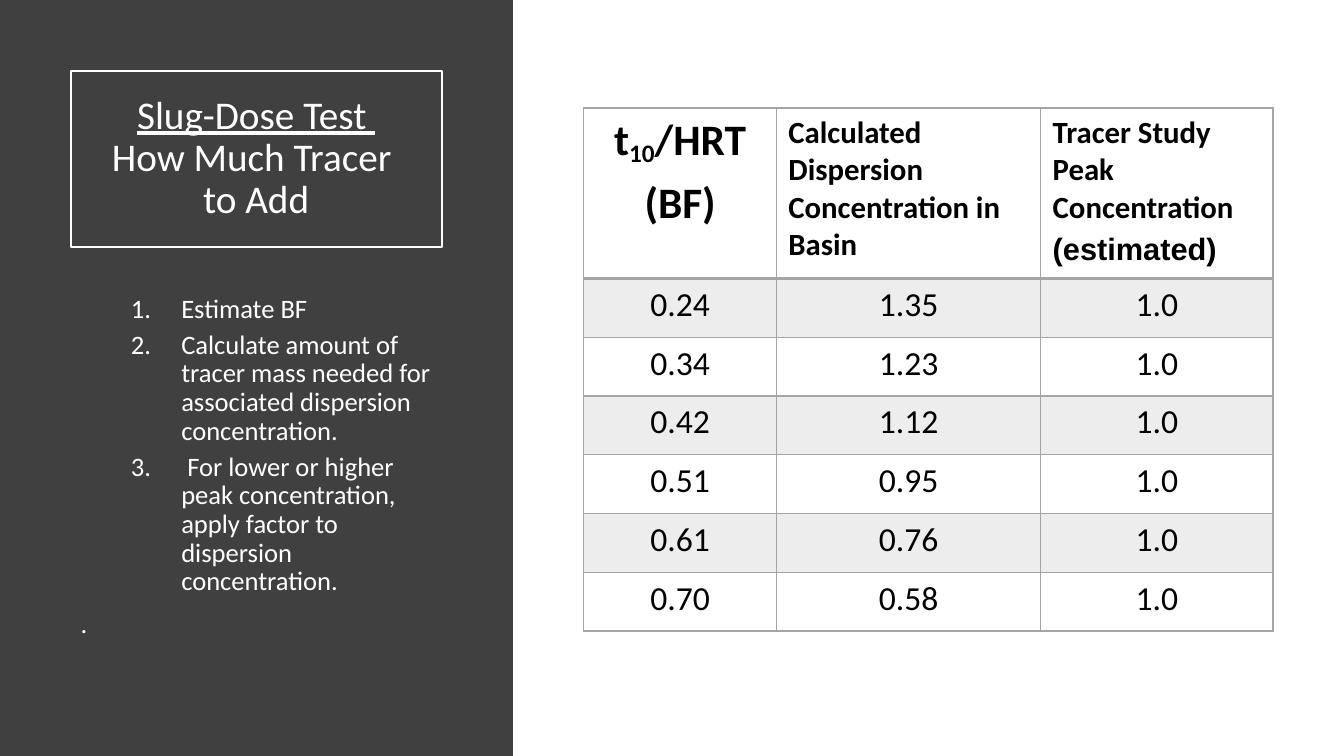
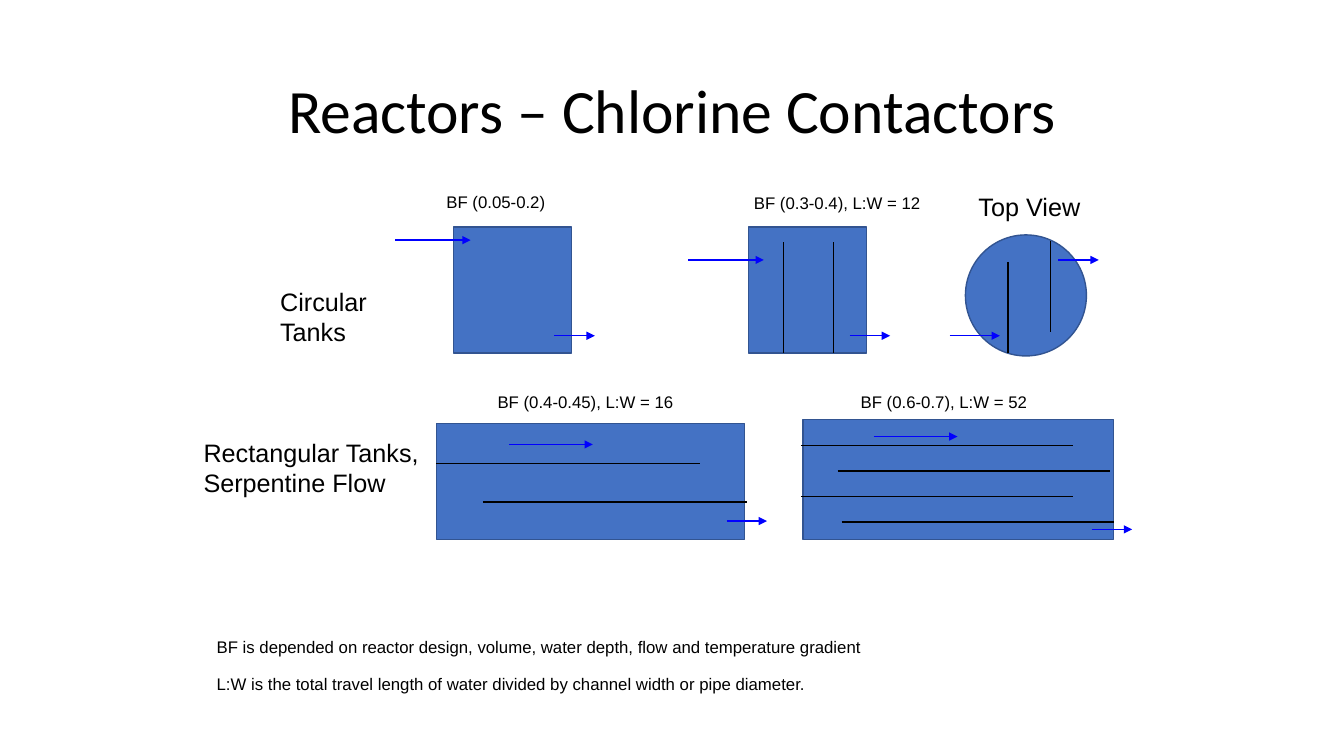
"""Builds two slides on tracer dosing and chlorine contactors."""
from lxml.etree import SubElement
from pptx import Presentation
from pptx.dml.color import RGBColor
from pptx.enum.shapes import MSO_CONNECTOR, MSO_SHAPE
from pptx.enum.text import MSO_ANCHOR, PP_ALIGN
from pptx.oxml.ns import qn
from pptx.util import Cm, Pt

COLORS = {
    "panel": "404040",
    "white": "FFFFFF",
    "black": "000000",
    "grid": "A5A5A5",
    "band": "EDEDED",
    "tank": "4472C4",
    "tank_edge": "325491",
    "flow": "0000FF",
}
HEADING_FONT = "Calibri"
LABEL_FONT = "Arial"
INFLOW, CHANNEL_FLOW, OUTFLOW = 1.9, 2.11, 1.02


def rgb(name):
    return RGBColor.from_string(COLORS[name])


def cm_box(box):
    return [Cm(length) for length in box]


def style(paragraph, size, color="black", font=HEADING_FONT, bold=False):
    paragraph.font.name = font
    paragraph.font.size = Pt(size)
    paragraph.font.bold = bold
    paragraph.font.color.rgb = rgb(color)


def add_block(shapes, kind, box, fill=None, line=None, weight=1):
    block = shapes.add_shape(kind, *cm_box(box))
    block.shadow.inherit = False
    if fill:
        block.fill.solid()
        block.fill.fore_color.rgb = rgb(fill)
    else:
        block.fill.background()
    if line:
        block.line.color.rgb = rgb(line)
        block.line.width = Pt(weight)
    else:
        block.line.fill.background()
    return block


def add_line(shapes, start, end, color="black", arrow=False):
    connector = shapes.add_connector(
        MSO_CONNECTOR.STRAIGHT, *cm_box(start), *cm_box(end))
    connector.line.color.rgb = rgb(color)
    connector.line.width = Pt(1)
    properties = connector._element.spPr
    if arrow:
        SubElement(connector.line._get_or_add_ln(), qn("a:tailEnd"), type="triangle")
    SubElement(properties, qn("a:effectLst"))


def write_title(frame, lines, size, color="black", underline_first=False):
    frame.word_wrap = True
    frame.vertical_anchor = MSO_ANCHOR.MIDDLE
    paragraph = frame.paragraphs[0]
    paragraph.alignment = PP_ALIGN.CENTER
    paragraph.line_spacing = 0.9
    style(paragraph, size, color)
    for index, line in enumerate(lines):
        if index:
            paragraph.add_line_break()
        run = paragraph.add_run()
        run.text = line
        if underline_first and index == 0:
            run.font.underline = True


def add_label(slide, box, lines, size=12):
    frame = slide.shapes.add_textbox(*cm_box(box)).text_frame
    frame.word_wrap = False
    frame.text = "\n".join(lines)
    for paragraph in frame.paragraphs:
        style(paragraph, size, font=LABEL_FONT)


def add_steps(slide, box, steps, closing):
    frame = slide.shapes.add_textbox(*cm_box(box)).text_frame
    frame.word_wrap = True
    frame.text = "\n".join([*steps, closing])
    for index, paragraph in enumerate(frame.paragraphs):
        style(paragraph, 19, "white")
        paragraph.line_spacing = 0.9
        numbered = index < len(steps)
        paragraph.space_before = Pt(5 if numbered else 10)
        if numbered:
            properties = paragraph._p.get_or_add_pPr()
            properties.set("marL", str(Cm(2.54)))
            properties.set("indent", str(-Cm(1.27)))
            numbering = properties.makeelement(
                qn("a:buAutoNum"), {"type": "arabicPeriod"})
            properties.find(qn("a:defRPr")).addprevious(numbering)


def add_border(cell, side, weight):
    border = SubElement(cell._tc.get_or_add_tcPr(), qn(f"a:ln{side}"), w=str(Pt(weight)))
    fill = SubElement(border, qn("a:solidFill"))
    SubElement(fill, qn("a:srgbClr"), val=COLORS["grid"])


def write_cell(cell, paragraphs, size, centred, bold=False, gap=0.2):
    cell.margin_left = cell.margin_right = Cm(0.3)
    cell.margin_top = cell.margin_bottom = Cm(0.15)
    frame = cell.text_frame
    for index, pieces in enumerate(paragraphs):
        paragraph = frame.add_paragraph() if index else frame.paragraphs[0]
        paragraph.alignment = PP_ALIGN.CENTER if centred else PP_ALIGN.LEFT
        paragraph.space_before = Pt(size * gap)
        style(paragraph, size, bold=bold)
        for position, piece in enumerate(pieces):
            run = paragraph.add_run()
            run.text = piece
            if position % 2:
                run._r.get_or_add_rPr().set("baseline", "-16000")


def add_dose_table(slide, corner, widths, header, rows):
    heights = [4.3] + [1.48] * len(rows)
    table = slide.shapes.add_table(
        len(heights), len(widths), *cm_box(corner),
        Cm(sum(widths)), Cm(sum(heights))).table
    table.first_row = table.horz_banding = False
    for column, width in zip(table.columns, widths):
        column.width = Cm(width)
    for row, height in zip(table.rows, heights):
        row.height = Cm(height)
    for column, heading in enumerate(header):
        write_cell(table.cell(0, column), bold=True, **heading)
    for row, values in enumerate(rows, 1):
        for column, value in enumerate(values):
            write_cell(table.cell(row, column), [(value,)], 24, True)
    for row in range(len(heights)):
        for column in range(len(widths)):
            cell = table.cell(row, column)
            for side in "LRTB":
                under_header = (row, side) in ((0, "B"), (1, "T"))
                add_border(cell, side, 2 if under_header else 1)
            if row % 2:
                cell.fill.solid()
                cell.fill.fore_color.rgb = rgb("band")
            else:
                cell.fill.background()
    table.cell(0, 2).text_frame.paragraphs[1].font.name = LABEL_FONT


def add_tank(slide, box, baffles=(), flows=(), kind=MSO_SHAPE.RECTANGLE):
    shapes = slide.shapes.add_group_shape().shapes
    add_block(shapes, kind, box, "tank", "tank_edge")
    for start, end in baffles:
        add_line(shapes, start, end)
    for x, y, length in flows:
        add_line(shapes, (x, y), (x + length, y), "flow", arrow=True)


def build_slug_dose(slide):
    add_block(slide.shapes, MSO_SHAPE.RECTANGLE, (0, 0, 12.93, 19.05), "panel")
    title = add_block(slide.shapes, MSO_SHAPE.RECTANGLE, (1.78, 1.78, 9.35, 4.45),
                      line="white", weight=1.5)
    write_title(title.text_frame, ["Slug-Dose Test ", "How Much Tracer ", "to Add"],
                28, "white", underline_first=True)
    add_steps(slide, (1.78, 7.32, 9.35, 9.5), [
        "Estimate BF",
        "Calculate amount of tracer mass needed for associated dispersion concentration.",
        " For lower or higher peak concentration, apply factor to dispersion concentration.",
    ], ".")
    header = [
        {"paragraphs": [("t", "10", "/HRT"), ("(BF)",)], "size": 31, "centred": True},
        {"paragraphs": [("Calculated Dispersion",), ("Concentration in Basin",)],
         "size": 22, "centred": False, "gap": 0},
        {"paragraphs": [("Tracer Study Peak Concentration",), ("(estimated)",)],
         "size": 22, "centred": False},
    ]
    doses = [("0.24", "1.35"), ("0.34", "1.23"), ("0.42", "1.12"),
             ("0.51", "0.95"), ("0.61", "0.76"), ("0.70", "0.58")]
    add_dose_table(slide, (14.71, 2.72), (4.86, 6.66, 5.85), header,
                   [(*dose, "1.0") for dose in doses])


def build_contactors(slide):
    title = slide.shapes.add_textbox(*cm_box((2.34, 1.02, 29.21, 3.68)))
    write_title(title.text_frame, ["Reactors – Chlorine Contactors"], 44)

    add_tank(slide, (11.43, 5.72, 2.97, 3.18),
             flows=[(9.96, 6.05, INFLOW), (13.97, 8.46, OUTFLOW)])
    add_tank(slide, (18.87, 5.72, 2.97, 3.18),
             [((x, 8.89), (x, 6.1)) for x in (19.74, 21)],
             [(17.35, 6.55, INFLOW), (21.41, 8.46, OUTFLOW)])
    add_tank(slide, (24.33, 5.92, 3.05, 3.05),
             [((x, bottom), (x, bottom - 2.29)) for x, bottom in ((25.4, 8.89), (26.47, 8.36))],
             [(23.93, 8.46, 1.27), (26.67, 6.55, OUTFLOW)], MSO_SHAPE.OVAL)
    add_tank(slide, (11, 10.67, 7.77, 2.92),
             [((x, y), (x + 6.65, y)) for x, y in ((11, 11.68), (12.17, 12.65))],
             [(12.83, 11.2, CHANNEL_FLOW), (18.31, 13.13, OUTFLOW)])
    serpentine = [(x, 11.23 + 0.64 * index)
                  for index, x in enumerate((20.19, 21.11, 20.19, 21.21))]
    add_tank(slide, (20.24, 10.57, 7.82, 3.02),
             [((x, y), (x + 6.86, y)) for x, y in serpentine],
             [(22.02, 11, CHANNEL_FLOW), (27.51, 13.34, OUTFLOW)])

    add_label(slide, (6.81, 7.09, 2.72, 1.8), ["Circular", "Tanks"], 18)
    add_label(slide, (4.88, 10.9, 6.17, 1.8), ["Rectangular Tanks,", "Serpentine Flow"], 18)
    add_label(slide, (24.41, 4.7, 3.1, 1.02), ["Top View"], 18)
    for x, y, width, text in (
        (11, 4.7, 3.02, "BF (0.05-0.2)"),
        (18.75, 4.72, 4.75, "BF (0.3-0.4), L:W = 12"),
        (12.29, 9.75, 5, "BF (0.4-0.45), L:W = 16"),
        (21.44, 9.75, 4.75, "BF (0.6-0.7), L:W = 52"),
        (5.21, 15.93, 17.32, "BF is depended on reactor design, volume, water depth, "
                             "flow and temperature gradient"),
        (5.21, 16.84, 15.9, "L:W is the total travel length of water divided by "
                            "channel width or pipe diameter."),
    ):
        add_label(slide, (x, y, width, 0.76), [text])


def main():
    deck = Presentation()
    deck.slide_width, deck.slide_height = Cm(33.87), Cm(19.05)
    for build in (build_slug_dose, build_contactors):
        build(deck.slides.add_slide(deck.slide_layouts[6]))
    deck.save("out.pptx")


if __name__ == "__main__":
    main()
